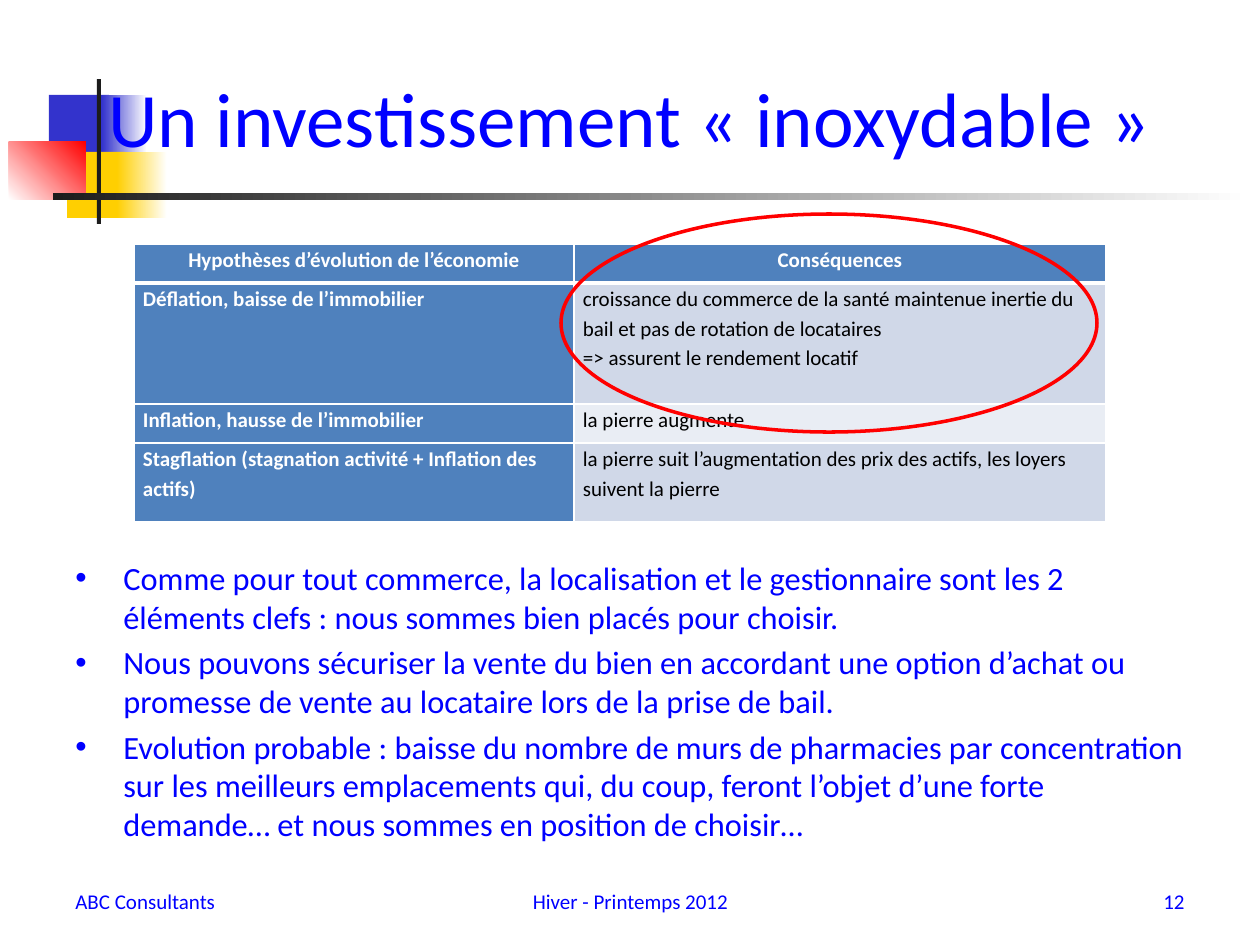
from lxml import etree
from pptx import Presentation, util as u
from pptx.dml.color import RGBColor
from pptx.enum import shapes, text
from pptx.oxml.ns import qn

PX = 914400 // 126
BLUE = RGBColor(0x00, 0x00, 0xFF)
NAVY = RGBColor(0x33, 0x33, 0xCC)
GOLD = RGBColor(0xFF, 0xCF, 0x01)
RED = RGBColor(0xFF, 0x00, 0x00)
INK = RGBColor(0x1C, 0x1C, 0x1C)
BLACK = RGBColor(0x00, 0x00, 0x00)
WHITE = RGBColor(0xFF, 0xFF, 0xFF)
STEEL = RGBColor(0x4F, 0x81, 0xBD)
BAND = RGBColor(0xD0, 0xD8, 0xE8)
PALE = RGBColor(0xE9, 0xED, 0xF4)

LEFT, MID, RIGHT = text.PP_ALIGN.LEFT, text.PP_ALIGN.CENTER, text.PP_ALIGN.RIGHT

# box, colours (two make a gradient), angle
DECOR = [
    ((49, 95, 60, 65), [NAVY], 0),
    ((102, 95, 45, 65), [NAVY, WHITE], 0),
    ((67, 152, 58, 66), [GOLD], 0),
    ((117, 152, 50, 66), [GOLD, WHITE], 0),
    ((9, 142, 77, 58), [WHITE, RED], 45),
    ((97, 79, 4, 145), [INK], 0),
    ((53, 193, 1198, 7), [INK, WHITE], 0),
]
TITLE = "Un investissement «\u00a0inoxydable\u00a0»"
POINTS = [
    "Comme pour tout commerce, la localisation et le gestionnaire sont les 2 "
    "éléments clefs : nous sommes bien placés pour choisir.",
    "Nous pouvons sécuriser la vente du bien en accordant une option d’achat ou "
    "promesse de vente au locataire lors de la prise de bail.",
    "Evolution probable : baisse du nombre de murs de pharmacies par concentration "
    "sur les meilleurs emplacements qui, du coup, feront l’objet d’une forte "
    "demande… et nous sommes en position de choisir…",
]
FOOT = [
    ((63, 876, 294, 50), "ABC Consultants", LEFT),
    ((431, 876, 399, 50), "Hiver - Printemps 2012", MID),
    ((903, 876, 294, 50), "12", RIGHT),
]
ROWS = [
    ("Hypothèses d’évolution de l’économie", "Conséquences"),
    ("Déflation, baisse de l’immobilier",
     "croissance du commerce de la santé maintenue inertie du bail et pas de "
     "rotation de locataires\n=> assurent le rendement locatif"),
    ("Inflation, hausse de l’immobilier", "la pierre augmente"),
    ("Stagflation (stagnation activité + Inflation des actifs)",
     "la pierre suit l’augmentation des prix des actifs, les loyers suivent la pierre"),
]
COLS, HIGH = [440, 532], [39, 121, 39, 79]


def emu(box):
    return [n * PX for n in box]


def put(obj, **vals):
    for key, val in vals.items():
        setattr(obj, key, val)


def style(par, size, color, bold=False, **vals):
    put(par, **vals)
    for run in par.runs:
        put(run.font, name="Calibri", size=u.Pt(size), bold=bold)
        run.font.color.rgb = color


def write(slide, box, lines, size, anchor, **vals):
    frame = slide.shapes.add_textbox(*emu(box)).text_frame
    put(frame, word_wrap=True, vertical_anchor=anchor, text="\n".join(lines))
    for par in frame.paragraphs:
        style(par, size, BLUE, **vals)
    return frame


def bullet(par, indent):
    props = par._p.get_or_add_pPr()
    props.set("marL", str(indent))
    props.set("indent", str(-indent))
    etree.SubElement(props, qn("a:buFont")).set("typeface", "Arial")
    etree.SubElement(props, qn("a:buChar")).set("char", "•")


def border(cell, foot):
    """Draw white cell edges, the lower one foot points wide."""
    props = cell._tc.get_or_add_tcPr()
    for at, (side, wide) in enumerate(zip("LRTB", (1, 1, 1, foot))):
        line = etree.Element(qn("a:ln" + side), w=str(u.Pt(wide)))
        fill = etree.SubElement(line, qn("a:solidFill"))
        etree.SubElement(fill, qn("a:srgbClr")).set("val", str(WHITE))
        props.insert(at, line)


def decorate(slide):
    for box, colors, angle in DECOR:
        shape = slide.shapes.add_shape(shapes.MSO_SHAPE.RECTANGLE, *emu(box))
        shape.shadow.inherit = False
        shape.line.fill.background()
        if len(colors) == 1:
            shape.fill.solid()
            shape.fill.fore_color.rgb = colors[0]
            continue
        shape.fill.gradient()
        shape.fill.gradient_angle = angle
        for stop, color in zip(shape.fill.gradient_stops, colors):
            stop.color.rgb = color


def tabulate(slide):
    box = emu((134, 244, sum(COLS), sum(HIGH)))
    table = slide.shapes.add_table(len(ROWS), len(COLS), *box).table
    for col, wide in zip(table.columns, COLS):
        col.width = wide * PX
    for r, (row, words) in enumerate(zip(table.rows, ROWS)):
        row.height = HIGH[r] * PX
        for c, word in enumerate(words):
            cell = table.cell(r, c)
            head = r == 0 or c == 0
            put(cell, text=word, margin_left=9 * PX, margin_right=9 * PX,
                margin_top=0, margin_bottom=0)
            cell.fill.solid()
            cell.fill.fore_color.rgb = STEEL if head else BAND if r % 2 else PALE
            border(cell, 1 if r else 3)
            for par in cell.text_frame.paragraphs:
                style(par, 12, WHITE if head else BLACK, head,
                      alignment=LEFT if r else MID, line_spacing=1.15)


def main():
    deck = Presentation()
    put(deck, slide_width=u.Inches(10), slide_height=u.Inches(7.5))
    slide = deck.slides.add_slide(deck.slide_layouts[6])
    top, middle = text.MSO_ANCHOR.TOP, text.MSO_ANCHOR.MIDDLE

    decorate(slide)
    write(slide, (63, 38, 1134, 158), [TITLE], 44, middle, alignment=MID)
    body = write(slide, (63, 552, 1134, 292), POINTS, 18.5, top,
                 space_before=u.Pt(3.7))
    for par in body.paragraphs:
        bullet(par, 48 * PX)
    for box, word, align in FOOT:
        write(slide, box, [word], 12, middle, alignment=align)
    tabulate(slide)

    ring = slide.shapes.add_shape(shapes.MSO_SHAPE.OVAL, *emu((561, 214, 536, 218)))
    ring.shadow.inherit = False
    ring.fill.background()
    ring.line.color.rgb = RED
    ring.line.width = u.Pt(2)
    deck.save("out.pptx")


if __name__ == "__main__":
    main()
